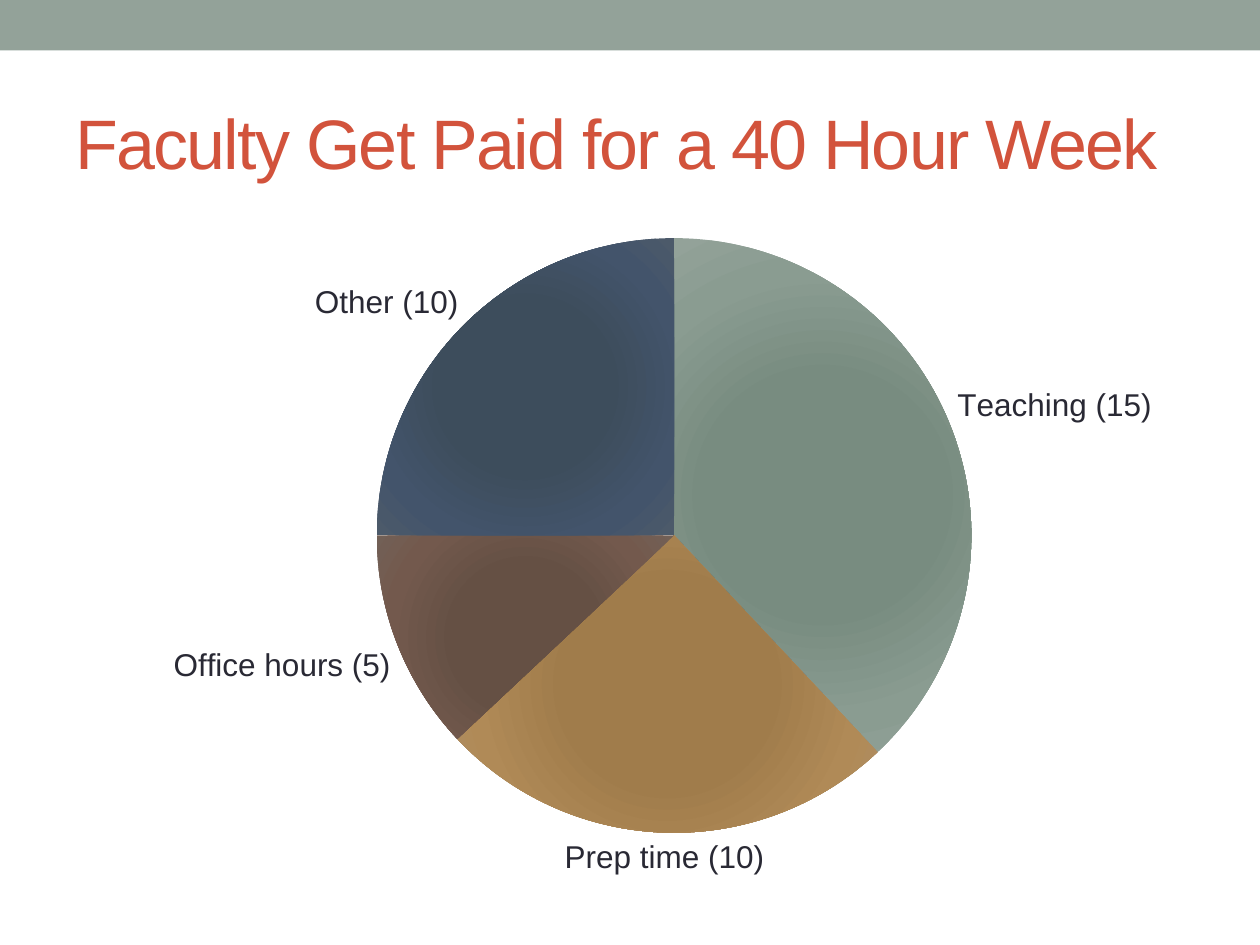
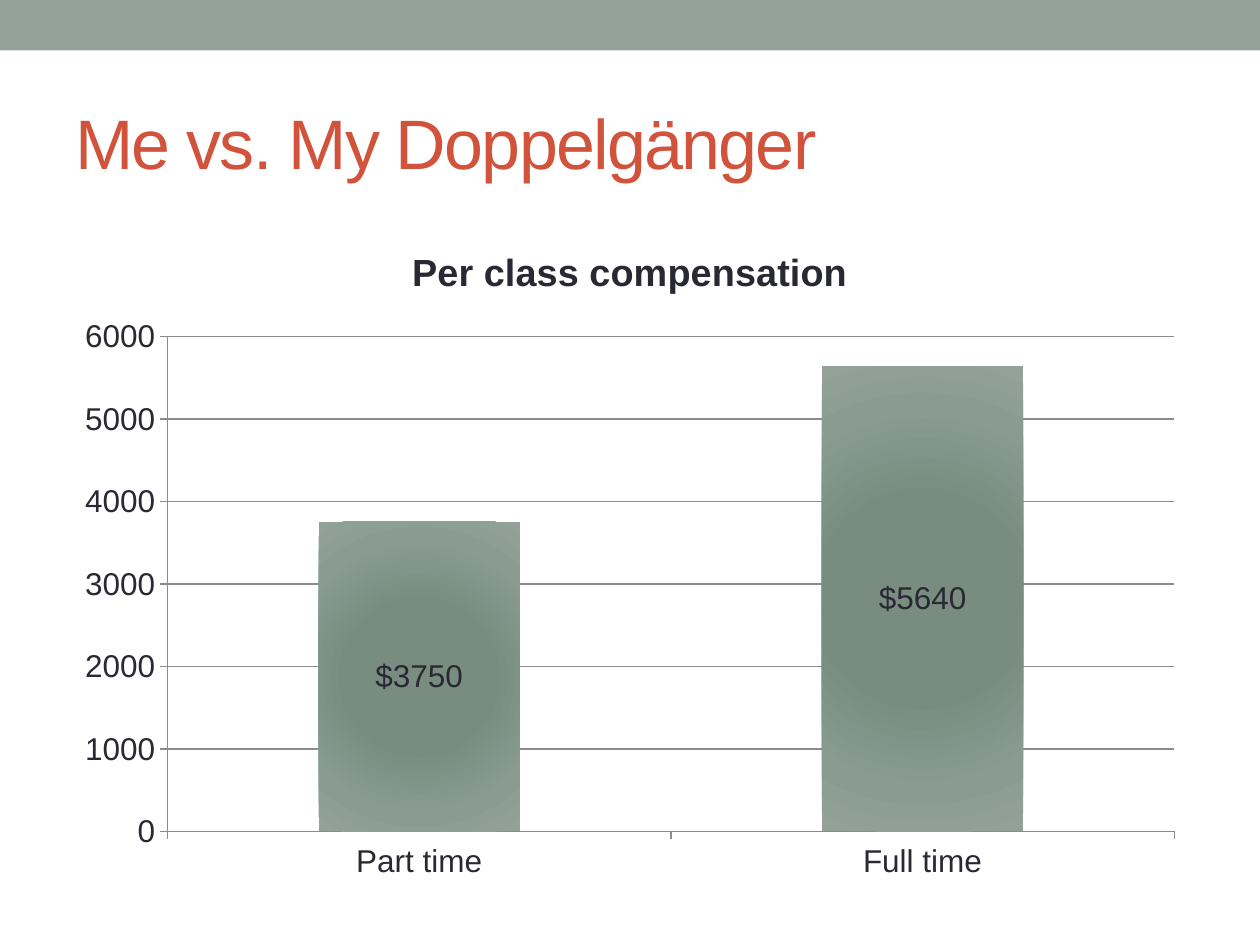
"""Build two slides about faculty pay: a pie of paid hours and a column chart."""
from dataclasses import dataclass

from lxml.etree import SubElement
from pptx import Presentation
from pptx.chart.chart import Chart
from pptx.chart.data import CategoryChartData
from pptx.dml.color import RGBColor
from pptx.enum.chart import XL_CHART_TYPE, XL_LABEL_POSITION, XL_TICK_MARK
from pptx.enum.shapes import MSO_SHAPE
from pptx.enum.text import MSO_ANCHOR
from pptx.oxml import parse_xml
from pptx.oxml.ns import nsdecls, qn
from pptx.slide import Slide
from pptx.util import Emu, Pt

EMU_PER_PX = 9144
FONT = "Arial"
SAGE = RGBColor(0x93, 0xA2, 0x99)
RUST = RGBColor(0xD2, 0x53, 0x3C)
INK = RGBColor(0x29, 0x29, 0x34)
GRAY = RGBColor(0x8C, 0x8C, 0x8C)


@dataclass(frozen=True)
class Box:
    left: int
    top: int
    width: int
    height: int

    def emu(self) -> tuple[Emu, ...]:
        return tuple(Emu(v * EMU_PER_PX)
                     for v in (self.left, self.top, self.width, self.height))


@dataclass(frozen=True)
class Glow:
    core: RGBColor
    middle: RGBColor
    edge: RGBColor


@dataclass(frozen=True)
class ChartSpec:
    kind: XL_CHART_TYPE
    series: str
    values: dict[str, int]
    plot: Box


BAND = Box(0, 0, 1000, 40)
TITLE = Box(50, 58, 900, 108)
CHART = Box(50, 175, 900, 533)

SAGE_GLOW = Glow(RGBColor(0x78, 0x8C, 0x80), RGBColor(0x8A, 0x9C, 0x91), SAGE)
OCHRE_GLOW = Glow(RGBColor(0xA0, 0x7C, 0x4B), RGBColor(0xB0, 0x8A, 0x57),
                  RGBColor(0xAD, 0x8F, 0x67))
BROWN_GLOW = Glow(RGBColor(0x65, 0x50, 0x44), RGBColor(0x73, 0x59, 0x4D),
                  RGBColor(0x72, 0x60, 0x56))
BLUE_GLOW = Glow(RGBColor(0x3D, 0x4D, 0x5C), RGBColor(0x43, 0x54, 0x6B),
                 RGBColor(0x4C, 0x5A, 0x6A))
PIE_GLOWS = (SAGE_GLOW, OCHRE_GLOW, BROWN_GLOW, BLUE_GLOW)

HOURS = ChartSpec(
    XL_CHART_TYPE.PIE, "Series 1",
    {"Teaching (15)": 38, "Prep time (10)": 25, "Office hours (5)": 12, "Other (10)": 25},
    Box(299, 189, 472, 472))
PAY = ChartSpec(
    XL_CHART_TYPE.COLUMN_STACKED, "Per class compensation",
    {"Part time": 3750, "Full time": 5640}, Box(133, 267, 799, 393))


def add_slide(prs: Presentation, title: str) -> Slide:
    """Add a blank slide with the top band and a title."""
    s = prs.slides.add_slide(prs.slide_layouts[6])
    band = s.shapes.add_shape(MSO_SHAPE.RECTANGLE, *BAND.emu())
    band.shadow.inherit = False
    band.fill.solid()
    band.fill.fore_color.rgb = SAGE
    band.line.fill.background()
    tf = s.shapes.add_textbox(*TITLE.emu()).text_frame
    tf.word_wrap = True
    tf.vertical_anchor = MSO_ANCHOR.MIDDLE
    r = tf.paragraphs[0].add_run()
    r.text = title
    r.font.name = FONT
    r.font.size = Pt(40)
    r.font.color.rgb = RUST
    r._r.get_or_add_rPr().set("spc", "-100")
    return s


def place_plot(chart: Chart, plot: Box) -> None:
    """Fix the inner plot area at a place on the slide."""
    area = chart._chartSpace.chart.plotArea
    for old in area.findall(qn("c:layout")):
        area.remove(old)
    layout = parse_xml(f"<c:layout {nsdecls('c')}><c:manualLayout/></c:layout>")
    parts = {
        "layoutTarget": "inner", "xMode": "edge", "yMode": "edge",
        "x": (plot.left - CHART.left) / CHART.width,
        "y": (plot.top - CHART.top) / CHART.height,
        "w": plot.width / CHART.width,
        "h": plot.height / CHART.height,
    }
    for name, value in parts.items():
        SubElement(layout[0], qn(f"c:{name}")).set("val", str(value))
    area.insert(0, layout)


def add_chart(s: Slide, spec: ChartSpec) -> Chart:
    """Add a chart with the shared font and no legend."""
    data = CategoryChartData()
    data.categories = list(spec.values)
    data.add_series(spec.series, list(spec.values.values()))
    chart = s.shapes.add_chart(spec.kind, *CHART.emu(), data).chart
    chart.has_legend = False
    chart.has_title = False
    chart.font.name = FONT
    chart.font.size = Pt(18)
    chart.font.color.rgb = INK
    place_plot(chart, spec.plot)
    return chart


def apply_glow(part, glow: Glow) -> None:
    """Fill a series or point with a radial gradient and no line."""
    part.format.line.fill.background()
    part.format.fill.solid()
    stops = ((0, glow.core), (40, glow.core), (75, glow.middle), (100, glow.edge))
    gs = "".join(f'<a:gs pos="{pos * 1000}"><a:srgbClr val="{color}"/></a:gs>'
                 for pos, color in stops)
    gradient = parse_xml(
        f'<a:gradFill {nsdecls("a")} rotWithShape="1"><a:gsLst>{gs}</a:gsLst>'
        '<a:path path="circle"><a:fillToRect l="50000" t="50000" r="50000" b="50000"/>'
        '</a:path></a:gradFill>')
    sp_pr = part.format._element.find(qn("c:spPr")) if hasattr(
        part.format, "_element") and part.format._element.tag != qn(
        "c:spPr") else part.format._element
    solid = next(sp_pr.iter(qn("a:solidFill")))
    solid.getparent().replace(solid, gradient)


def build_hours(prs: Presentation) -> None:
    """Build the slide with the pie of paid hours."""
    chart = add_chart(add_slide(prs, "Faculty Get Paid for a 40 Hour Week"), HOURS)
    plot = chart.plots[0]
    plot.vary_by_categories = True
    for i, glow in enumerate(PIE_GLOWS):
        apply_glow(plot.series[0].points[i], glow)
    labels = plot.series[0].data_labels
    labels.show_category_name = True
    labels.show_value = False
    labels.show_percentage = False
    labels.position = XL_LABEL_POSITION.OUTSIDE_END


def build_pay(prs: Presentation) -> None:
    """Build the slide with pay per class in columns."""
    chart = add_chart(add_slide(prs, "Me vs. My Doppelgänger"), PAY)
    chart.has_title = True
    r = chart.chart_title.text_frame.paragraphs[0].add_run()
    r.text = PAY.series
    r.font.name = FONT
    r.font.size = Pt(21.6)
    r.font.bold = True
    r.font.color.rgb = INK
    plot = chart.plots[0]
    plot.vary_by_categories = False
    plot.gap_width = 150
    plot.overlap = 100
    apply_glow(plot.series[0], SAGE_GLOW)
    labels = plot.series[0].data_labels
    labels.show_value = True
    labels.number_format = '"$"0'
    labels.number_format_is_linked = False
    labels.position = XL_LABEL_POSITION.CENTER
    axis = chart.value_axis
    axis.minimum_scale, axis.maximum_scale, axis.major_unit = 0, 6000, 1000
    axis.has_major_gridlines = True
    for line in (axis.major_gridlines.format.line, axis.format.line,
                 chart.category_axis.format.line):
        line.color.rgb = GRAY
        line.width = Pt(0.75)
    for ax in (axis, chart.category_axis):
        ax.major_tick_mark = XL_TICK_MARK.OUTSIDE
        ax.minor_tick_mark = XL_TICK_MARK.NONE


def main() -> None:
    """Build and save the slides."""
    prs = Presentation()
    prs.slide_width, prs.slide_height = Emu(1000 * EMU_PER_PX), Emu(750 * EMU_PER_PX)
    build_hours(prs)
    build_pay(prs)
    prs.save("out.pptx")


if __name__ == "__main__":
    main()
